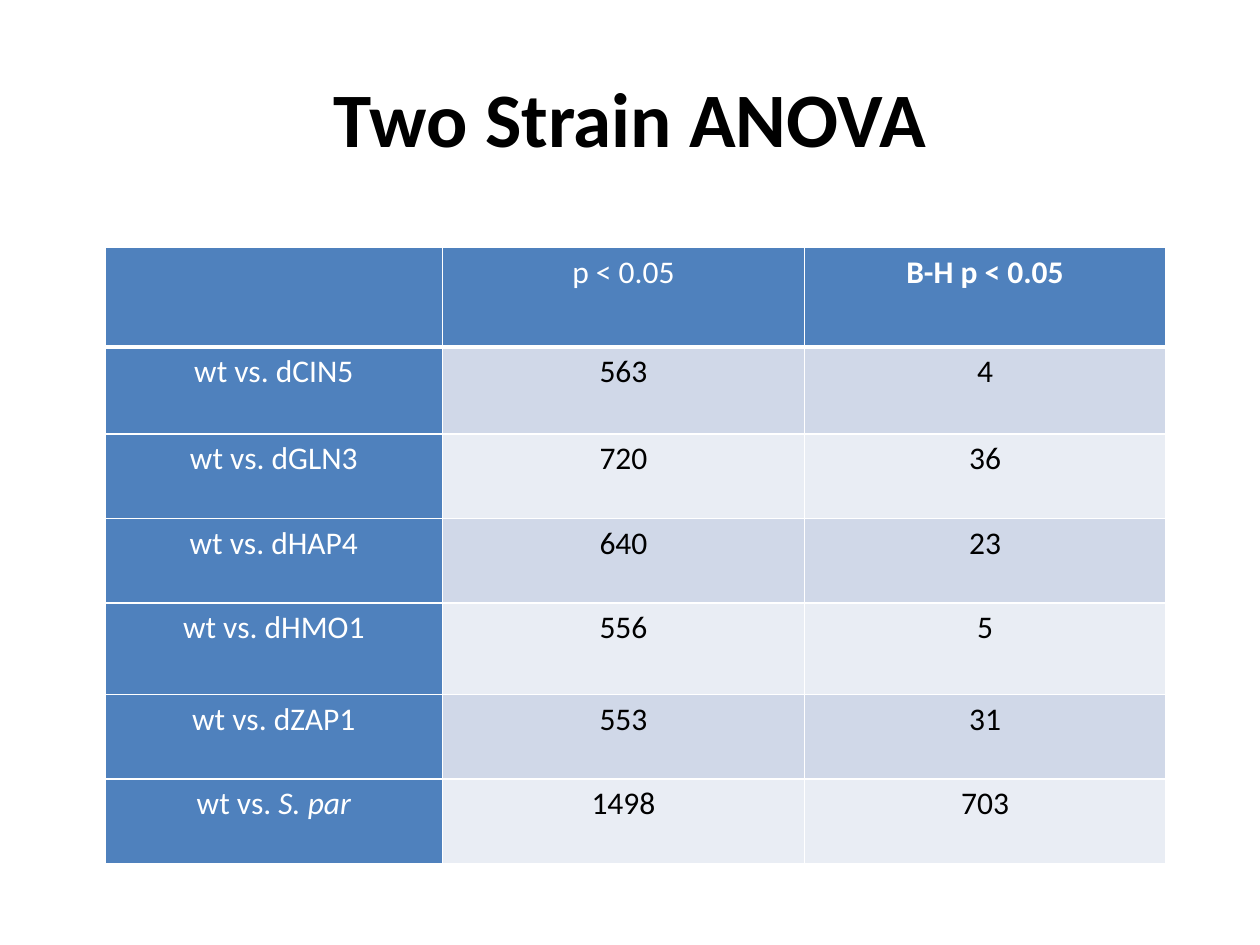
import pptx
import pptx.dml.color
import pptx.enum.text
import pptx.oxml.ns
import pptx.util
from lxml import etree

COLORS = {
    "header": "4F81BD",
    "odd": "D0D8E8",
    "even": "E9EDF4",
    "light": "FFFFFF",
    "dark": "000000",
}
COLUMN_WIDTHS = [2.68, 2.87, 2.87]
ROW_HEIGHTS = [0.79, 0.69, 0.67, 0.67, 0.73, 0.67, 0.67]
# Each cell is a list of (text, style) spans.
HEADER = [[], [("p < 0.05", "")], [("B-H p < 0.05", "bold")]]
RESULTS = [
    ("dCIN5", 563, 4),
    ("dGLN3", 720, 36),
    ("dHAP4", 640, 23),
    ("dHMO1", 556, 5),
    ("dZAP1", 553, 31),
    ("S. par", 1498, 703),
]


def color(name):
    return pptx.dml.color.RGBColor.from_string(COLORS[name])


def result_row(strain, raw, adjusted):
    if strain.startswith("d"):
        label = [(f"wt vs. {strain}", "")]
    else:
        label = [("wt vs. ", ""), (strain, "italic")]
    return [label, [(str(raw), "")], [(str(adjusted), "")]]


class SlideBuilder:
    font = "Calibri"
    title_size = pptx.util.Pt(44)
    cell_size = pptx.util.Pt(18)

    def __init__(self, deck):
        self.deck = deck
        self.page = deck.slides.add_slide(deck.slide_layouts[5])

    def place(self, left, top, width, height):
        """Turn shares of the slide's size into lengths."""
        across, down = self.deck.slide_width, self.deck.slide_height
        return [int(share * size) for share, size in
                zip((left, top, width, height), (across, down, across, down))]

    def style(self, para, size, color_name):
        para.alignment = pptx.enum.text.PP_ALIGN.CENTER
        para.font.name = self.font
        para.font.size = size
        para.font.color.rgb = color(color_name)

    def title(self, text, *area):
        box = self.page.shapes.title
        box.left, box.top, box.width, box.height = self.place(*area)
        box.text_frame.text = text
        box.text_frame.vertical_anchor = pptx.enum.text.MSO_ANCHOR.MIDDLE
        para = box.text_frame.paragraphs[0]
        self.style(para, self.title_size, "dark")
        para.font.bold = True

    def table(self, rows, widths, heights, *area):
        table = self.page.shapes.add_table(
            len(rows), len(widths), *self.place(*area)).table
        for column, width in zip(table.columns, widths):
            column.width = pptx.util.Inches(width)
        for row, height in zip(table.rows, heights):
            row.height = pptx.util.Inches(height)
        for i, row in enumerate(rows):
            for j, spans in enumerate(row):
                self.cell(table.cell(i, j), spans, i, j)

    def cell(self, cell, spans, row, column):
        heading = row == 0 or column == 0
        band = "odd" if row % 2 else "even"
        self.borders(cell, bottom=3 if row == 0 else 1)
        cell.fill.solid()
        cell.fill.fore_color.rgb = color("header" if heading else band)
        cell.margin_left = cell.margin_right = pptx.util.Inches(0.07)
        cell.margin_top = cell.margin_bottom = 0
        para = cell.text_frame.paragraphs[0]
        self.style(para, self.cell_size, "light" if heading else "dark")
        para.line_spacing = 1.15
        para.font.bold = False
        for text, look in spans:
            span = para.add_run()
            span.text = text
            if look:
                setattr(span.font, look, True)

    def borders(self, cell, bottom):
        """Draw white cell edges; call before the fill, which must follow them."""
        qn = pptx.oxml.ns.qn
        properties = cell._tc.get_or_add_tcPr()
        for edge, points in (("L", 1), ("R", 1), ("T", 1), ("B", bottom)):
            line = etree.SubElement(properties, qn(f"a:ln{edge}"),
                                    w=str(pptx.util.Pt(points)))
            fill = etree.SubElement(line, qn("a:solidFill"))
            etree.SubElement(fill, qn("a:srgbClr"), val=COLORS["light"])


def main():
    deck = pptx.Presentation()
    deck.slide_width = pptx.util.Inches(10)
    deck.slide_height = pptx.util.Inches(7.5)
    slide = SlideBuilder(deck)
    slide.title("Two Strain ANOVA", 0.05, 0.04, 0.9, 1 / 6)
    rows = [HEADER] + [result_row(*result) for result in RESULTS]
    slide.table(rows, COLUMN_WIDTHS, ROW_HEIGHTS, 1 / 12, 0.262, 0.842, 0.65)
    deck.save("out.pptx")


if __name__ == "__main__":
    main()
